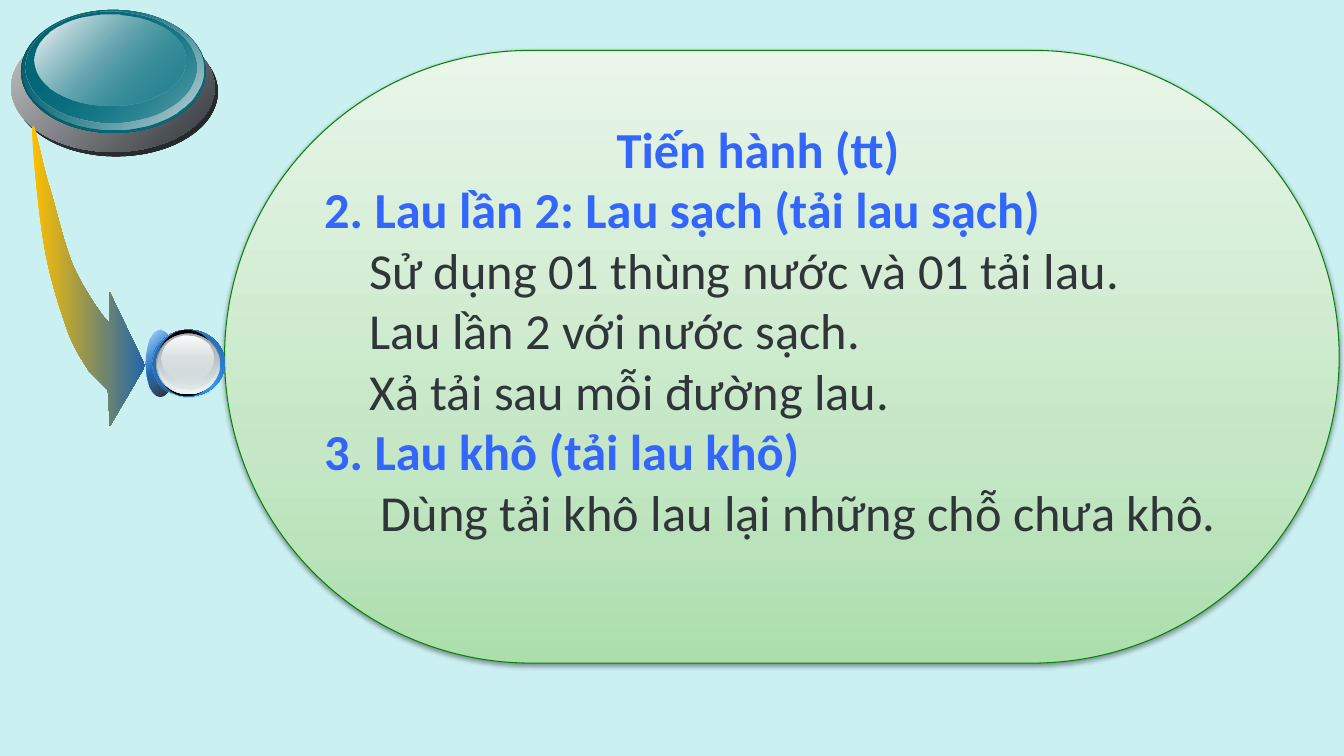
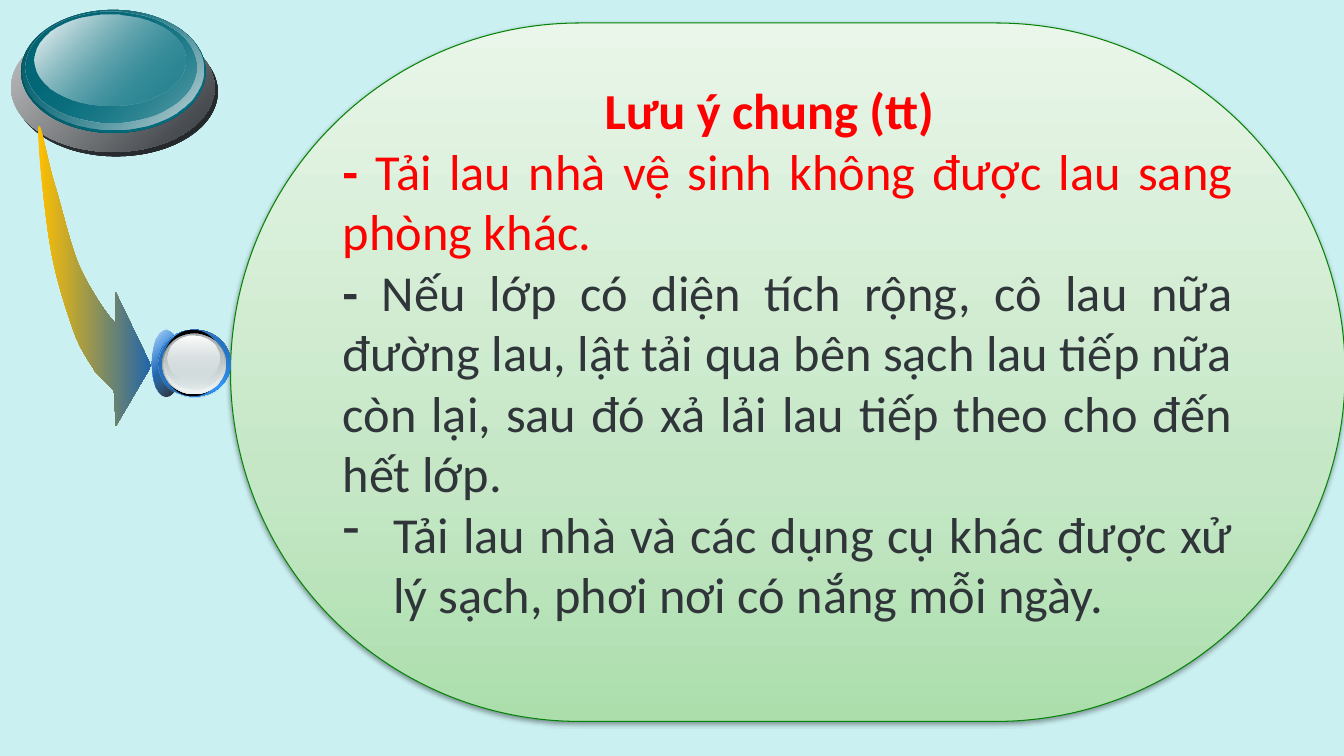
from lxml import etree
from pptx import Presentation
from pptx.dml.color import RGBColor
from pptx.enum.shapes import MSO_SHAPE
from pptx.enum.text import MSO_ANCHOR, PP_ALIGN
from pptx.oxml.ns import qn
from pptx.util import Cm, Pt

OVAL, PILL = MSO_SHAPE.OVAL, MSO_SHAPE.ROUNDED_RECTANGLE
LEFT, JUSTIFY, MIDDLE = PP_ALIGN.LEFT, PP_ALIGN.JUSTIFY, MSO_ANCHOR.MIDDLE

BACKGROUND, BLUE, RED, DARK, GREEN = "CBF0F1", "3366FF", "FF0000", "30353A", "048306"
FONT, TEXT_SIZE = "Calibri", 36

# Content: spans are (text, bold); lengths in cm
SLIDES = [
    {"shift": 0, "pill": (5.66, 1.27, 28.09, 15.44), "lift": 1.37, "align": LEFT, "lines": [
        {"spans": [("Tiến hành (tt)", True)], "color": BLUE, "left": 7.37},
        {"spans": [("2. Lau lần 2: Lau sạch (tải lau sạch)", True)], "color": BLUE},
        {"spans": [("Sử dụng 01 thùng nước và 01 tải lau.", False)], "left": 1.13},
        {"spans": [("Lau lần 2 với nước sạch.", False)], "left": 1.13},
        {"spans": [("Xả tải sau mỗi đường lau.", False)], "left": 1.13},
        {"spans": [("3. Lau khô (tải lau khô)", True)], "color": BLUE},
        {"spans": [("Dùng tải khô lau lại những chỗ chưa khô.", False)], "left": 1.43},
    ]},
    {"shift": 0.15, "pill": (5.81, 0.58, 28.09, 17.6), "lift": 1.04, "align": JUSTIFY, "lines": [
        {"spans": [("Lưu ý chung (tt)", True)], "color": RED, "left": 6.6},
        {"spans": [("- ", True), ("Tải lau nhà vệ sinh không được lau sang phòng khác.", False)],
         "color": RED},
        {"spans": [("- ", True),
                   ("Nếu lớp có diện tích rộng, cô lau nữa đường lau, lật tải qua bên sạch lau "
                    "tiếp nữa còn lại, sau đó xả lải lau tiếp theo cho đến hết lớp.", False)]},
        {"spans": [("Tải lau nhà và các dụng cụ khác được xử lý sạch, phơi nơi có nắng mỗi ngày.",
                    False)], "left": 1.27, "bullet": "-"},
    ]},
]

# Ovals from back to front: box, gradient angle, stops (position, colour, opacity)
DISC = [
    ((0.36, 0.69, 5.13, 3.25), 45, [(0, "30353A", 100), (100, "23272A", 100)]),
    ((0.28, 0.58, 5.13, 3.25), 45, [(0, "C7C8C8", 100), (100, "30353A", 100)]),
    ((0.53, 0.25, 4.65, 3.1), 45, [(0, "01515D", 100), (100, "027182", 100)]),
    ((0.58, 0.25, 4.55, 3.02), 45, [(0, "027182", 0), (100, "D4DBDE", 100)]),
    ((0.64, 0.28, 4.32, 2.82), 45, [(0, "026675", 100), (100, "027182", 48)]),
    ((0.86, 0.36, 3.81, 2.29), 45, [(0, "FFFFFF", 100), (100, "027182", 38)]),
]
KNOB = [
    ((3.68, 8.33, 0.71, 1.68), 45,
     [(0, "FFFFFF", 100), (50, "3399FF", 100), (100, "FFFFFF", 100)]),
    ((3.68, 8.31, 0.71, 1.68), 45, [(0, "3399FF", 32), (100, "000000", 90)]),
    ((3.84, 8.31, 1.83, 1.68), 315,
     [(0, "1C538A", 100), (50, "3399FF", 100), (100, "1C538A", 100)]),
    ((3.84, 8.33, 1.83, 1.68), 45, [(0, "2061A2", 100), (100, "3399FF", 0)]),
    ((3.96, 8.31, 1.5, 1.68), 0, [(0, "000000", 100), (100, "000000", 100)]),
    ((3.94, 8.41, 1.6, 1.52), 90, [(0, "636869", 100), (100, "D6E1E2", 100)]),
    ((3.96, 8.41, 1.57, 1.5), 90, [(0, "D6E1E2", 0), (100, "F1F5F5", 100)]),
    ((3.99, 8.41, 1.5, 1.4), 90, [(0, "AAB2B3", 100), (100, "D6E1E2", 48)]),
    ((4.06, 8.46, 1.32, 1.14), 90, [(0, "FFFFFF", 100), (100, "D6E1E2", 38)]),
]
PILL_STOPS = [(0, "ACDEAC", 100), (35, "C5E7C6", 100), (100, "E9F6E9", 100)]
ARROW_STOPS = [(0, "FFC000", 100), (100, "2165AA", 100)]

# Arrow outline: one point is a straight step, three points are a Bezier step
ARROW_START = (0.81, 3.25)
ARROW_STEPS = [
    [(0.79, 3.51), (0.97, 5.38), (1.12, 6.22)],
    [(1.27, 7.09), (1.52, 7.8), (1.7, 8.33)],
    [(1.88, 8.84), (2.11, 9.12), (2.24, 9.35)],
    [(2.59, 9.7)], [(2.72, 9.83)], [(2.77, 10.74)], [(3.66, 9.22)], [(2.77, 7.37)], [(2.77, 8.15)],
    [(2.62, 8.05), (2.11, 7.29), (1.85, 6.71)],
    [(1.6, 6.12), (1.4, 5.18), (1.22, 4.62)],
    [(1.04, 4.04), (0.84, 2.84), (0.81, 3.25)],
]
CURVE_PARTS = 12


def rgb(color):
    return RGBColor.from_string(color)


def add_color(parent, color, opacity):
    node = etree.SubElement(parent, qn("a:srgbClr"), val=color)
    if opacity < 100:
        etree.SubElement(node, qn("a:alpha"), val=str(opacity * 1000))


def paint(shape, angle, stops):
    """Gradient fill, no line and no shadow."""
    shape.shadow.inherit = False
    shape.line.fill.background()
    gradient = etree.Element(qn("a:gradFill"), rotWithShape="1")
    stop_list = etree.SubElement(gradient, qn("a:gsLst"))
    for position, color, opacity in stops:
        stop = etree.SubElement(stop_list, qn("a:gs"), pos=str(position * 1000))
        add_color(stop, color, opacity)
    etree.SubElement(gradient, qn("a:lin"), ang=str(angle * 60000), scaled="0")
    shape._element.spPr.insert(2, gradient)  # right after the geometry


def add_ovals(page, ovals, shift=0):
    group = page.shapes.add_group_shape()
    for (left, top, width, height), angle, stops in ovals:
        oval = group.shapes.add_shape(OVAL, Cm(left + shift), Cm(top), Cm(width), Cm(height))
        paint(oval, angle, stops)


def arrow_points():
    points = [ARROW_START]
    for step in ARROW_STEPS:
        if len(step) == 1:
            points += step
            continue
        corners = [points[-1], *step]
        for part in range(1, CURVE_PARTS + 1):
            t = part / CURVE_PARTS
            weights = ((1 - t) ** 3, 3 * t * (1 - t) ** 2, 3 * t * t * (1 - t), t ** 3)
            points.append(tuple(sum(w * corner[axis] for w, corner in zip(weights, corners))
                                for axis in (0, 1)))
    return points


def add_arrow(page, shift):
    points = [(Cm(x + shift), Cm(y)) for x, y in arrow_points()]
    builder = page.shapes.build_freeform(*points[0])
    builder.add_line_segments(points[1:])
    paint(builder.convert_to_shape(), 0, ARROW_STOPS)


def write_line(para, line, align):
    para.alignment = align
    para.font.name, para.font.size = FONT, Pt(TEXT_SIZE)
    para.font.color.rgb = rgb(line.get("color", DARK))
    for text, bold in line["spans"]:
        span = para.add_run()
        span.text, span.font.bold = text, bold
    left = Cm(line.get("left", 0))
    properties = para._p.get_or_add_pPr()
    properties.set("marL", str(left))
    if "bullet" in line:
        properties.set("indent", str(-left))
        bullet = etree.Element(qn("a:buChar"), char=line["bullet"])
        properties.insert(0, bullet)


def add_pill(page, content):
    pill = page.shapes.add_shape(PILL, *(Cm(length) for length in content["pill"]))
    pill.adjustments[0] = 0.5
    paint(pill, 270, PILL_STOPS)
    pill.line.color.rgb, pill.line.width = rgb(GREEN), Pt(0.75)
    effects = pill._element.spPr.find(qn("a:effectLst"))
    shadow = etree.SubElement(effects, qn("a:outerShdw"), blurRad=str(Pt(3.1)), dist=str(Pt(1.6)),
                              dir=str(90 * 60000), rotWithShape="0")
    add_color(shadow, "000000", 38)
    # Text sits a little above the middle
    frame = pill.text_frame
    frame.word_wrap, frame.vertical_anchor = True, MIDDLE
    frame.margin_left = frame.margin_right = Cm(0.25)
    frame.margin_top, frame.margin_bottom = Cm(0.13), Cm(0.13 + content["lift"])
    for index, line in enumerate(content["lines"]):
        para = frame.add_paragraph() if index else frame.paragraphs[0]
        write_line(para, line, content["align"])


def main():
    deck = Presentation()
    deck.slide_width, deck.slide_height = Cm(33.87), Cm(19.05)
    for content in SLIDES:
        page = deck.slides.add_slide(deck.slide_layouts[6])
        page.background.fill.solid()
        page.background.fill.fore_color.rgb = rgb(BACKGROUND)
        add_ovals(page, DISC)
        add_pill(page, content)
        add_ovals(page, KNOB, content["shift"])
        add_arrow(page, content["shift"])
    deck.save("out.pptx")


if __name__ == "__main__":
    main()
